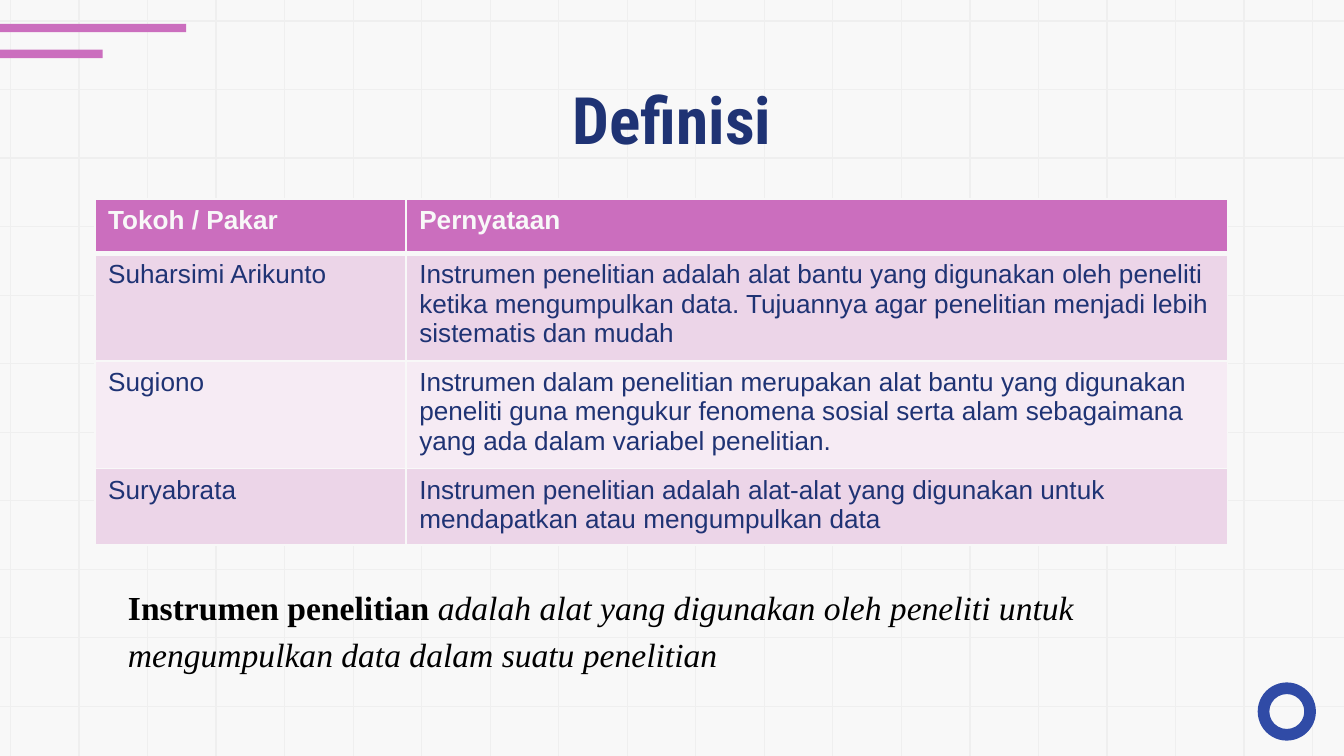
from dataclasses import dataclass

import lxml.etree
import pptx
import pptx.dml.color
import pptx.enum.shapes
import pptx.enum.text
import pptx.oxml.ns
import pptx.util
from pptx.dml.color import RGBColor
from pptx.util import Cm

BACKGROUND = RGBColor(0xF8, 0xF8, 0xF8)
GRID_GRAY = RGBColor(0xEF, 0xEF, 0xEF)
PINK = RGBColor(0xCB, 0x6E, 0xBE)
PINK_LIGHT = RGBColor(0xEC, 0xD5, 0xE8)
PINK_PALE = RGBColor(0xF6, 0xEB, 0xF4)
NAVY = RGBColor(0x1F, 0x33, 0x74)
BLUE = RGBColor(0x30, 0x4B, 0xA6)
BLACK = RGBColor(0, 0, 0)

SLIDE_WIDTH, SLIDE_HEIGHT = 25.4, 14.29
GRID_ROWS, GRID_COLUMNS = 11, 20
GRID_STEP = 1.295
GRID_LEFT, GRID_TOP = 0.2, 0.4


@dataclass(frozen=True)
class Box:
    left: float
    top: float
    width: float
    height: float

    def lengths(self) -> tuple:
        return Cm(self.left), Cm(self.top), Cm(self.width), Cm(self.height)


@dataclass(frozen=True)
class Style:
    font: str
    size: int
    color: RGBColor
    bold: bool = False
    italic: bool = False


@dataclass(frozen=True)
class Row:
    expert: str
    statement: str
    height: float
    fill: RGBColor
    style: Style
    top_border: float = 1
    bottom_border: float = 1


TITLE_STYLE = Style("Roboto Condensed", 35, NAVY, bold=True)
TERM_STYLE = Style("Times New Roman", 18, BLACK, bold=True)
MEANING_STYLE = Style("Times New Roman", 18, BLACK, italic=True)
HEADER_STYLE = Style("Arial", 14, BACKGROUND, bold=True)
CELL_STYLE = Style("Arial", 14, NAVY)

COLUMN_WIDTHS = (5.88, 15.53)
ROWS = (
    Row("Tokoh / Pakar", "Pernyataan", 1.03, PINK, HEADER_STYLE, bottom_border=3),
    Row("Suharsimi Arikunto",
        "Instrumen penelitian adalah alat bantu yang digunakan oleh peneliti ketika "
        "mengumpulkan data. Tujuannya agar penelitian menjadi lebih sistematis dan mudah",
        1.92, PINK_LIGHT, CELL_STYLE, top_border=3),
    Row("Sugiono",
        "Instrumen dalam penelitian merupakan alat bantu yang digunakan peneliti guna "
        "mengukur fenomena sosial serta alam sebagaimana yang ada dalam variabel penelitian.",
        1.92, PINK_PALE, CELL_STYLE),
    Row("Suryabrata",
        "Instrumen penelitian adalah alat-alat yang digunakan untuk mendapatkan atau "
        "mengumpulkan data",
        1.35, PINK_LIGHT, CELL_STYLE),
)


def add_run(paragraph, text: str, style: Style) -> None:
    run = paragraph.add_run()
    run.text = text
    run.font.name = style.font
    run.font.size = pptx.util.Pt(style.size)
    run.font.bold = style.bold
    run.font.italic = style.italic
    run.font.color.rgb = style.color


def add_grid_line(slide, left: float, top: float, right: float, bottom: float) -> None:
    line = slide.shapes.add_connector(
        pptx.enum.shapes.MSO_CONNECTOR.STRAIGHT, Cm(left), Cm(top), Cm(right), Cm(bottom))
    line.line.color.rgb = GRID_GRAY
    line.line.width = pptx.util.Pt(0.75)
    lxml.etree.SubElement(line._element.spPr, pptx.oxml.ns.qn("a:effectLst"))


def add_grid(slide) -> None:
    for index in range(GRID_ROWS):
        y = GRID_TOP + index * GRID_STEP
        add_grid_line(slide, 0, y, SLIDE_WIDTH, y)
    for index in range(GRID_COLUMNS):
        x = GRID_LEFT + index * GRID_STEP
        add_grid_line(slide, x, 0, x, SLIDE_HEIGHT)


def add_filled_shape(slide, kind, box: Box, color: RGBColor):
    shape = slide.shapes.add_shape(kind, *box.lengths())
    shape.shadow.inherit = False
    shape.fill.solid()
    shape.fill.fore_color.rgb = color
    shape.line.fill.background()
    return shape


def add_text_box(slide, box: Box, runs: list[tuple[str, Style]]):
    frame = slide.shapes.add_textbox(*box.lengths()).text_frame
    frame.word_wrap = True
    frame.vertical_anchor = pptx.enum.text.MSO_ANCHOR.TOP
    frame.margin_left = frame.margin_right = Cm(0.25)
    frame.margin_top = frame.margin_bottom = Cm(0.25)
    paragraph = frame.paragraphs[0]
    for text, style in runs:
        add_run(paragraph, text, style)
    return paragraph


def set_borders(cell, row: Row) -> None:
    properties = cell._tc.get_or_add_tcPr()
    widths = {"lnL": 1, "lnR": 1, "lnT": row.top_border, "lnB": row.bottom_border}
    for side, width in widths.items():
        line = lxml.etree.SubElement(
            properties, pptx.oxml.ns.qn(f"a:{side}"), w=str(pptx.util.Pt(width)))
        fill = lxml.etree.SubElement(line, pptx.oxml.ns.qn("a:solidFill"))
        lxml.etree.SubElement(fill, pptx.oxml.ns.qn("a:srgbClr"), val=str(BACKGROUND))


def add_definition_table(slide, box: Box) -> None:
    table = slide.shapes.add_table(len(ROWS), len(COLUMN_WIDTHS), *box.lengths()).table
    for column, width in zip(table.columns, COLUMN_WIDTHS):
        column.width = Cm(width)
    for table_row, row in zip(table.rows, ROWS):
        table_row.height = Cm(row.height)
        for cell, text in zip(table_row.cells, (row.expert, row.statement)):
            set_borders(cell, row)
            cell.fill.solid()
            cell.fill.fore_color.rgb = row.fill
            add_run(cell.text_frame.paragraphs[0], text, row.style)


def main() -> None:
    presentation = pptx.Presentation()
    presentation.slide_width = Cm(SLIDE_WIDTH)
    presentation.slide_height = Cm(SLIDE_HEIGHT)
    slide = presentation.slides.add_slide(presentation.slide_layouts[6])
    slide.background.fill.solid()
    slide.background.fill.fore_color.rgb = BACKGROUND

    add_grid(slide)
    shapes = pptx.enum.shapes.MSO_SHAPE
    ring = add_filled_shape(slide, shapes.DONUT, Box(23.77, 12.9, 1.1, 1.1), BLUE)
    ring.adjustments[0] = 0.2
    for top, width in ((0.45, 3.52), (0.94, 1.94)):
        add_filled_shape(slide, shapes.RECTANGLE, Box(0, top, width, 0.16), PINK)

    title = add_text_box(slide, Box(2, 1.25, 21.41, 1.6), [("Definisi", TITLE_STYLE)])
    title.alignment = pptx.enum.text.PP_ALIGN.CENTER

    summary = add_text_box(slide, Box(1.79, 10.74, 21.41, 2.31), [
        ("Instrumen penelitian ", TERM_STYLE),
        ("adalah alat yang digunakan oleh peneliti untuk mengumpulkan data "
         "dalam suatu penelitian", MEANING_STYLE),
    ])
    summary.line_spacing = 1.15
    summary._p.get_or_add_pPr().set("marL", str(Cm(0.38)))

    add_definition_table(slide, Box(1.79, 3.76, sum(COLUMN_WIDTHS), sum(row.height for row in ROWS)))
    presentation.save("out.pptx")


if __name__ == "__main__":
    main()
